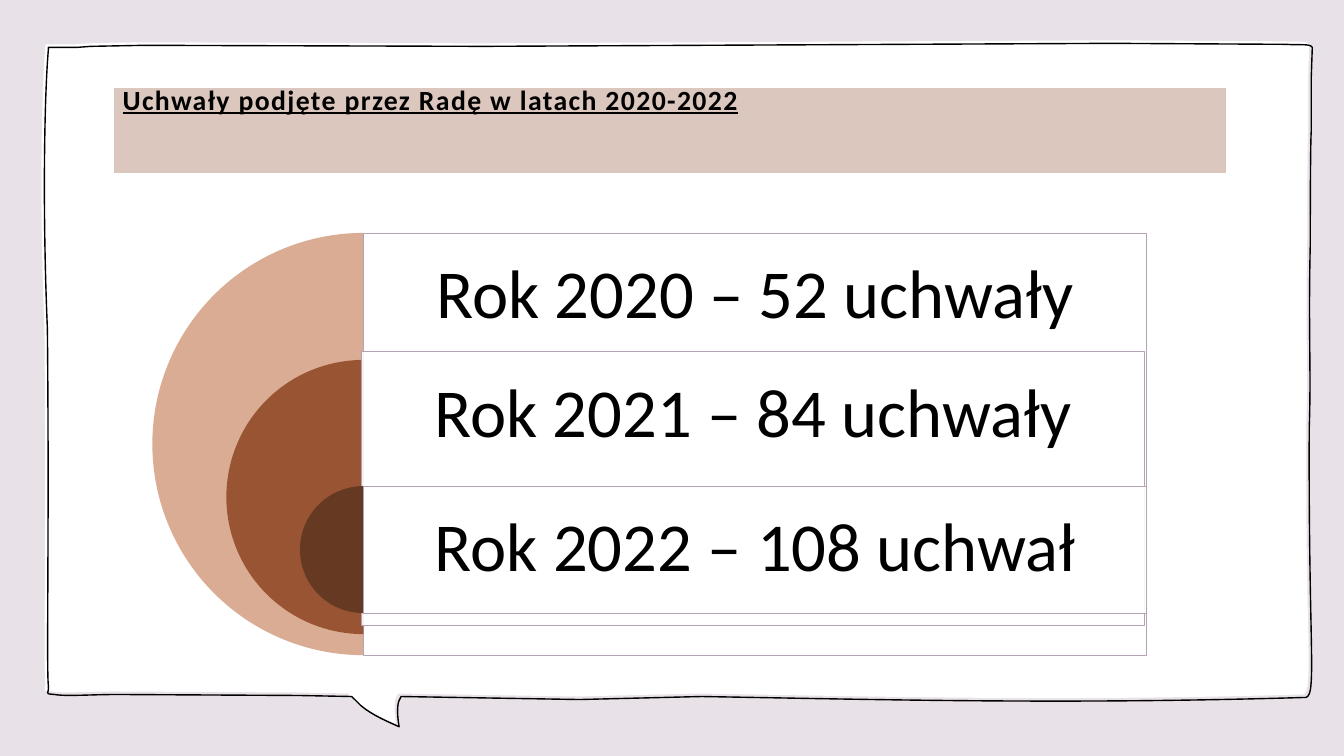
from dataclasses import dataclass

from lxml.etree import SubElement
from pptx import Presentation
from pptx.dml.color import RGBColor as RGB
from pptx.enum.shapes import MSO_SHAPE as SHAPE
from pptx.enum.text import MSO_ANCHOR as ANCHOR, PP_ALIGN as ALIGN
from pptx.oxml.ns import qn
from pptx.util import Cm, Pt


@dataclass(frozen=True)
class Theme:
    background: str = "E8E2E8"
    paper: str = "FFFFFF"
    ink: str = "000000"
    title_band: str = "DBC7BD"
    panel_line: str = "B5A2B5"
    font: str = "Calibri"
    title_size: float = 19.8
    label_size: float = 49


THEME = Theme()

# Speech bubble outline in inches: 2 numbers make a line, 6 a Bézier curve.
BUBBLE_START = (11.03, 0.43)
BUBBLE = [
    (12.76, 0.44),
    (12.89, 0.45, 13, 0.43, 13.02, 0.47),
    (13.01, 0.77),
    (13.01, 0.94, 13.01, 1.13, 13.01, 1.3),
    (13, 1.42, 13, 2.35, 13, 2.42),
    (12.98, 3.3, 13.01, 3.65, 12.99, 4.25),
    (12.98, 6.56, 13.08, 6.95, 12.93, 6.92),
    (10.56, 6.99, 8.72, 6.94, 6.96, 6.91),
    (5.75, 6.94), (3.98, 6.91), (3.96, 6.95),
    (3.94, 6.99, 3.94, 7.1, 3.96, 7.21),
    (3.85, 7.16, 3.7, 7.1, 3.58, 7),
    (3.49, 6.91), (2.96, 6.9), (1.17, 6.89),
    (0.9, 6.89, 0.66, 6.91, 0.54, 6.89),
    (0.43, 6.88, 0.49, 6.89, 0.48, 6.8),
    (0.46, 6.65, 0.49, 5.22, 0.47, 3.26),
    (0.42, 2.07, 0.44, 0.96, 0.48, 0.49),
    (0.48, 0.48, 0.48, 0.48, 0.48, 0.47),
    (0.54, 0.47), (0.77, 0.47), (0.9, 0.46), (1.43, 0.45), (4.8, 0.46),
    BUBBLE_START,
]
CM_PER_INCH = 2.54

# Text, diameter, circle top, panel left and panel top, in cm.
YEARS = [
    ("Rok 2020 – 52 uchwały", 10.64, 5.87, 9.17, 5.87),
    ("Rok 2021 – 84 uchwały", 6.91, 9.07, 9.12, 8.86),
    ("Rok 2022 – 108 uchwał", 3.2, 12.25, 9.17, 12.25),
]
RING_COLOURS = ["DBAC94", "995533", "663922"]
RING_CENTRE = 9.16
PANEL_WIDTH = 19.71
LABEL_HEIGHT = 3.2


def paint(sp, fill=None, line=None, width=1):
    """Set fill and line, either of which may be absent, and drop the shadow."""
    sp.shadow.inherit = False
    if fill:
        sp.fill.solid()
        sp.fill.fore_color.rgb = RGB.from_string(fill)
    else:
        sp.fill.background()
    if line:
        sp.line.color.rgb = RGB.from_string(line)
        sp.line.width = Pt(width)
    else:
        sp.line.fill.background()


def set_opacity(sp, percent):
    colour = sp.fill._xPr.find(qn("a:solidFill"))[0]
    SubElement(colour, qn("a:alpha")).set("val", str(percent * 1000))


def add_shape(shapes, kind, x, y, w, h, **style):
    sp = shapes.add_shape(kind, Cm(x), Cm(y), Cm(w), Cm(h))
    paint(sp, **style)
    return sp


def add_run(p, text, size):
    r = p.add_run()
    r.text = text
    r.font.name = THEME.font
    r.font.size = Pt(size)
    r.font.color.rgb = RGB.from_string(THEME.ink)
    return r


def bend_segment(segment, points):
    """Turn a straight path segment into a cubic curve through the points."""
    segment.clear()
    segment.tag = qn("a:cubicBezTo")
    for x, y in points:
        pt = SubElement(segment, qn("a:pt"))
        pt.set("x", str(x))
        pt.set("y", str(y))


def add_bubble(shapes, offset=0, **style):
    def place(step):
        lengths = [Cm((v - offset) * CM_PER_INCH) for v in step]
        return list(zip(lengths[::2], lengths[1::2]))

    steps = [place(step) for step in BUBBLE]
    builder = shapes.build_freeform(*place(BUBBLE_START)[0])
    builder.add_line_segments([points[-1] for points in steps], close=True)
    sp = builder.convert_to_shape()
    segments = list(sp._element.iter(qn("a:lnTo")))
    for segment, points in zip(segments, steps):
        if len(points) == 3:
            bend_segment(segment, [(x - sp.left, y - sp.top) for x, y in points])
    paint(sp, **style)


def add_title(shapes, text):
    sp = add_shape(shapes, SHAPE.RECTANGLE, 2.84, 2.18, 28.09, 2.2,
                   fill=THEME.title_band, line=THEME.paper, width=1.5)
    tf = sp.text_frame
    tf.vertical_anchor = ANCHOR.TOP
    tf.margin_top = Cm(-0.1)
    p = tf.paragraphs[0]
    p.alignment = ALIGN.LEFT
    r = add_run(p, text, THEME.title_size)
    r.font.bold = r.font.underline = True
    r.font._element.set("spc", "100")


def add_label(shapes, text, x, y):
    tf = shapes.add_textbox(Cm(x), Cm(y), Cm(PANEL_WIDTH), Cm(LABEL_HEIGHT)).text_frame
    tf.word_wrap = True
    tf.vertical_anchor = ANCHOR.MIDDLE
    tf.margin_left = tf.margin_right = tf.margin_top = tf.margin_bottom = Cm(0.5)
    p = tf.paragraphs[0]
    p.alignment = ALIGN.CENTER
    p.line_spacing = 0.9
    add_run(p, text, THEME.label_size)


def add_year(shapes, colour, text, diameter, ring_top, x, y):
    """Half circle, panel and label of one year."""
    ring = add_shape(shapes, SHAPE.PIE, RING_CENTRE - diameter / 2, ring_top,
                     diameter, diameter, fill=colour)
    ring.adjustments[0], ring.adjustments[1] = 54, 162
    panel = add_shape(shapes, SHAPE.RECTANGLE, x, y, PANEL_WIDTH, diameter,
                      fill=THEME.paper, line=THEME.panel_line, width=0.5)
    set_opacity(panel, 90)
    add_label(shapes, text, x, y)


def main():
    prs = Presentation()
    prs.slide_width, prs.slide_height = Cm(33.87), Cm(19.05)
    s = prs.slides.add_slide(prs.slide_layouts[6])
    s.background.fill.solid()
    s.background.fill.fore_color.rgb = RGB.from_string(THEME.background)

    add_bubble(s.shapes, offset=0.03, fill=THEME.paper)
    add_bubble(s.shapes, line=THEME.ink)
    add_title(s.shapes, "Uchwały podjęte przez Radę w latach 2020-2022")
    group = s.shapes.add_group_shape()
    for colour, year in zip(RING_COLOURS, YEARS):
        add_year(group.shapes, colour, *year)
    prs.save("out.pptx")


if __name__ == "__main__":
    main()
